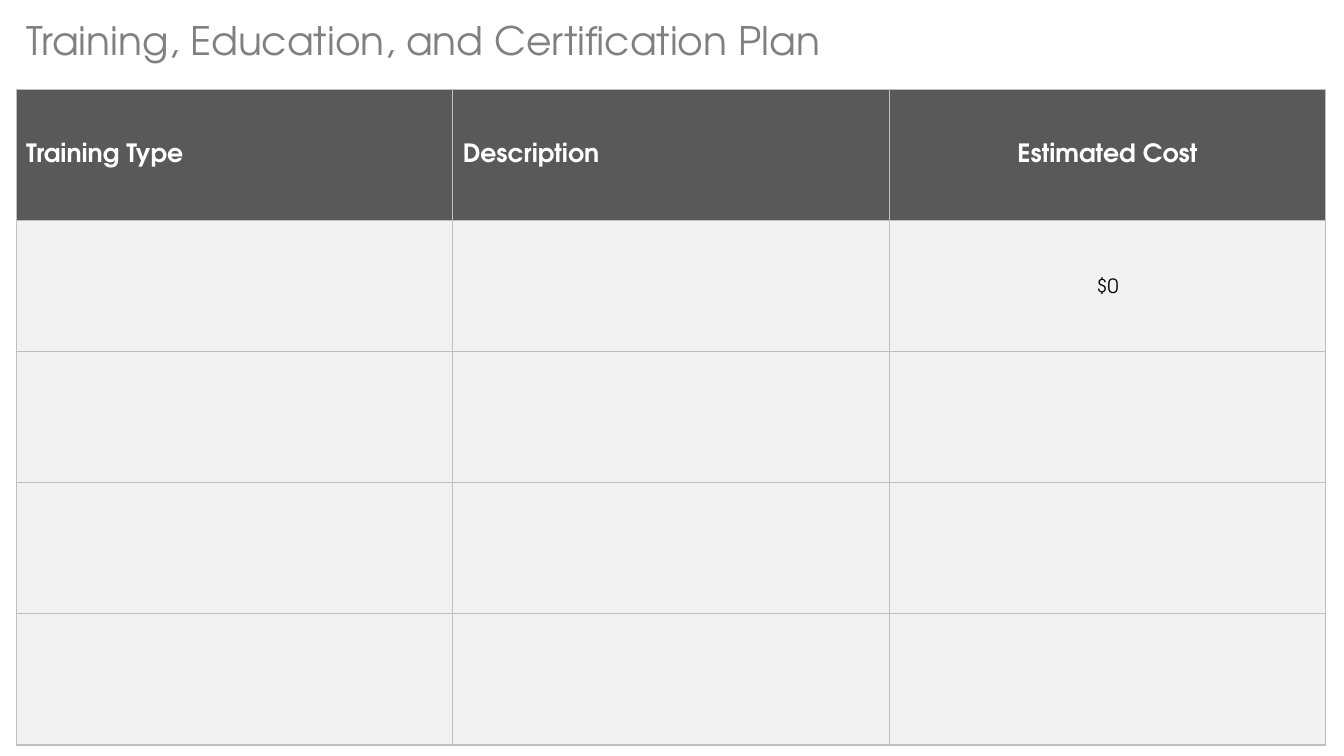
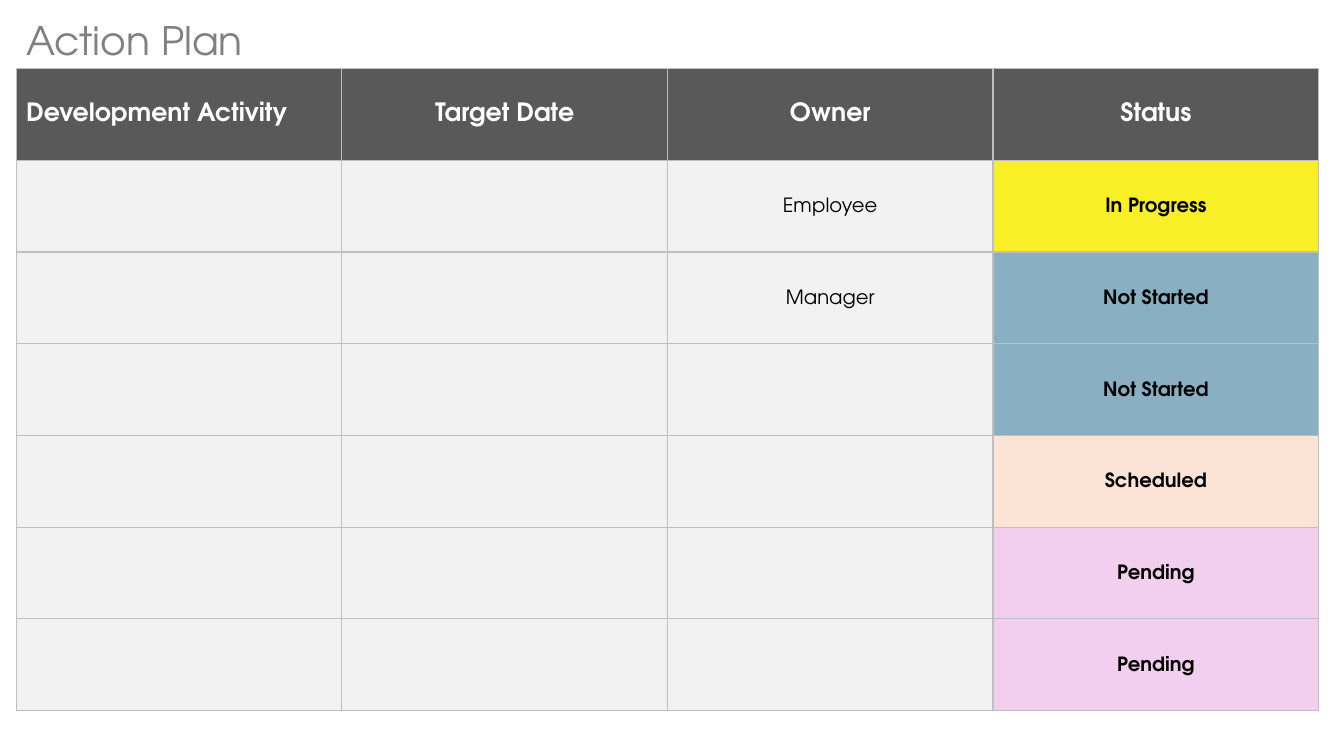
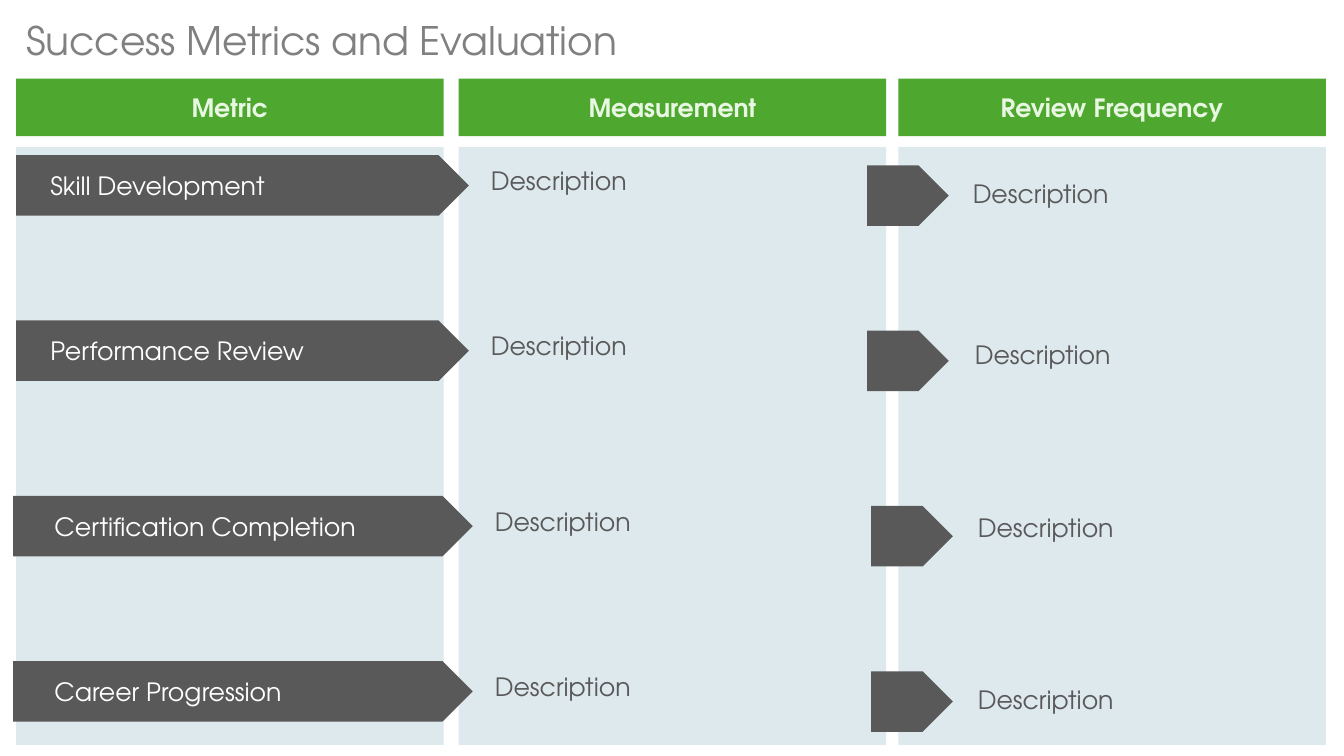
from lxml import etree
from pptx import Presentation
from pptx import util as u
from pptx.dml import color
from pptx.enum import shapes, text
from pptx.oxml import ns

# Shared look
FONT = "TeX Gyre Adventor"
WHITE, BLACK, DARK, TITLE = "FFFFFF", "000000", "595959", "808080"
CELL, BORDER = "F2F2F2", "BFBFBF"
GREEN, PALE_GREEN, PANEL = "4EA72E", "E7F7E1", "DEE9EE"
STATUS = {"In Progress": "F9EF27", "Not Started": "88AFC2",
          "Scheduled": "FBE3D6", "Pending": "F2CFEE"}
LEFT, CENTER = text.PP_ALIGN.LEFT, text.PP_ALIGN.CENTER
MIDDLE = text.MSO_ANCHOR.MIDDLE
MARGIN = 0.16
rgb = color.RGBColor.from_string


def write(tf, words, size, hex_color, bold=False, align=LEFT):
    tf.text = words
    p = tf.paragraphs[0]
    p.alignment = align
    font = p.runs[0].font
    font.name, font.size, font.bold = FONT, u.Pt(size), bold
    font.color.rgb = rgb(hex_color)
    return p


def add_block(s, kind, hex_color, *box):
    sp = s.shapes.add_shape(kind, *map(u.Inches, box))
    sp.shadow.inherit = False
    sp.fill.solid()
    sp.fill.fore_color.rgb = rgb(hex_color)
    sp.line.fill.background()
    sp.text_frame.vertical_anchor = MIDDLE
    return sp


prs = Presentation()
prs.slide_width, prs.slide_height = u.Inches(13.33), u.Inches(7.5)

# Title placement lives in the layout, so every slide inherits it
layout = prs.slide_layouts[5]
title = layout.placeholders[0]
title.left, title.top = u.Inches(MARGIN), u.Inches(0.11)
title.width, title.height = u.Inches(12.98), u.Inches(0.57)
title.text_frame.vertical_anchor = text.MSO_ANCHOR.TOP
title.text_frame.auto_size = text.MSO_AUTO_SIZE.NONE

for name in ("Training, Education, and Certification Plan", "Action Plan",
             "Success Metrics and Evaluation"):
    s = prs.slides.add_slide(layout)
    write(s.shapes.title.text_frame, name, 28, TITLE)
training, action, metrics = prs.slides

# Tables: slide, top, column width, row height, left-aligned headings, rows
training_rows = [["Training Type", "Description", "Estimated Cost"],
                 ["", "", "$0"]] + [["", "", ""]] * 3
action_rows = [
    ["Development Activity", "Target Date", "Owner", "Status"],
    ["", "", "Employee", "In Progress"],
    ["", "", "Manager", "Not Started"],
    ["", "", "", "Not Started"],
    ["", "", "", "Scheduled"],
    ["", "", "", "Pending"],
    ["", "", "", "Pending"],
]
for s, top, col_w, row_h, n_left, rows in (
        (training, 0.89, 4.33, 1.3, 2, training_rows),
        (action, 0.68, 3.23, 0.91, 1, action_rows)):
    n_cols = len(rows[0])
    table = s.shapes.add_table(
        len(rows), n_cols, u.Inches(MARGIN), u.Inches(top),
        u.Inches(col_w * n_cols), u.Inches(row_h * len(rows))).table
    table.horz_banding = False
    for i, row in enumerate(rows):
        for j, words in enumerate(row):
            cell = table.cell(i, j)
            cell.vertical_anchor = MIDDLE
            # Borders come before the fill in the cell properties
            tc_pr = cell._tc.get_or_add_tcPr()
            for side in ("a:lnL", "a:lnR", "a:lnT", "a:lnB"):
                ln = etree.SubElement(tc_pr, ns.qn(side), w=str(u.Pt(1)))
                solid = etree.SubElement(ln, ns.qn("a:solidFill"))
                etree.SubElement(solid, ns.qn("a:srgbClr"), val=BORDER)
            cell.fill.solid()
            cell.fill.fore_color.rgb = rgb(
                DARK if i == 0 else STATUS.get(words, CELL))
            if i == 0:
                write(cell.text_frame, words, 18, WHITE, True,
                      LEFT if j < n_left else CENTER)
            elif words:
                cell.margin_left = cell.margin_right = u.Inches(0.07)
                cell.margin_top = cell.margin_bottom = 0
                p = write(cell.text_frame, words, 14, BLACK,
                          words in STATUS, CENTER)
                p.line_spacing, p.space_after = 1.15, u.Pt(8)

# Metric columns: heading bar above a panel
RECT, ARROW = shapes.MSO_SHAPE.RECTANGLE, shapes.MSO_SHAPE.PENTAGON
for x, heading in ((MARGIN, "Metric"), (4.55, "Measurement"),
                   (8.91, "Review Frequency")):
    bar = add_block(metrics, RECT, GREEN, x, 0.78, 4.24, 0.57)
    write(bar.text_frame, heading, 18, PALE_GREEN, True, CENTER)
    add_block(metrics, RECT, PANEL, x, 1.46, 4.24, 5.93)

# Metric rows: the lower pair has wider arrows and sits slightly to the right
for label, top, wide, review_x, review_y in (
        ("Skill Development", 1.54, False, 9.55, 1.72),
        ("Performance Review", 3.18, False, 9.57, 3.32),
        ("Certification Completion", 4.92, True, 9.6, 5.03),
        ("Career Progression", 6.56, True, 9.6, 6.74)):
    x, width, shift = (0.13, 4.56, 0.04) if wide else (MARGIN, 4.49, 0)
    arrow = add_block(metrics, ARROW, DARK, x, top, width, 0.6)
    arrow.text_frame.margin_left = u.Inches(0.5 + shift - x)
    write(arrow.text_frame, label, 18, WHITE)
    add_block(metrics, ARROW, DARK, 8.6 + shift, top + 0.1, 0.81, 0.6)
    for box_x, box_y in ((4.77 + shift, top + 0.05), (review_x, review_y)):
        box = metrics.shapes.add_textbox(
            *map(u.Inches, (box_x, box_y, 3.6, 0.4)))
        box.text_frame.word_wrap = True
        write(box.text_frame, "Description", 18, DARK)

prs.save("out.pptx")
